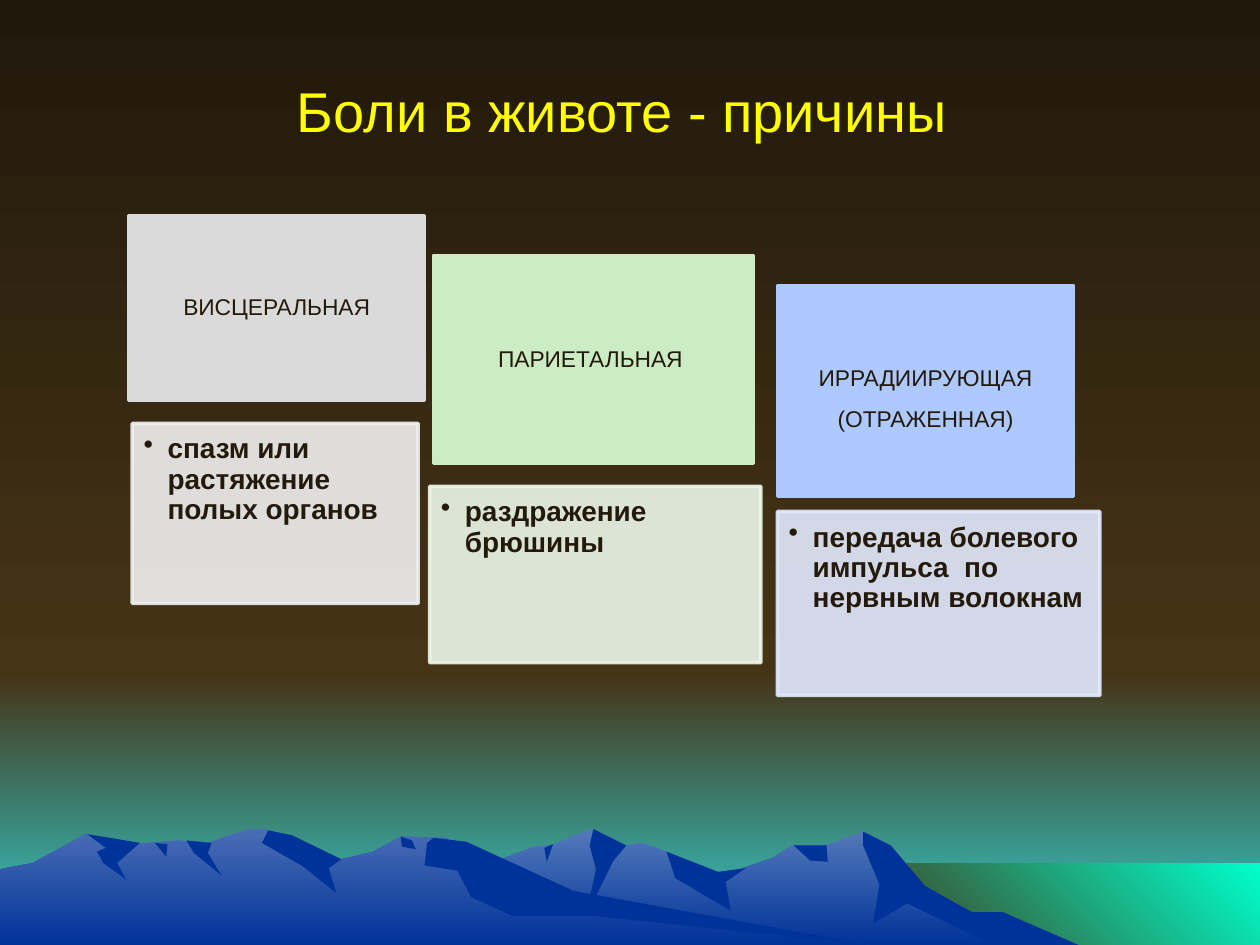
from dataclasses import dataclass
from typing import Optional

import pptx
import pptx.dml.color
import pptx.dml.fill
import pptx.enum.shapes
import pptx.enum.text
import pptx.oxml.ns
import pptx.util
from lxml import etree

EMU_PER_PX = 9144
WIDTH, HEIGHT = 1000, 750
HORIZON, SHORE = 533, 685


@dataclass(frozen=True)
class Theme:
    font: str = "Arial"
    title_size: int = 32
    label_size: int = 13
    detail_size: int = 16
    title: str = "FFFF00"
    text: str = "231A0B"
    earth: str = "463416"
    night: str = "20180B"
    dawn: str = "33CCCC"
    sea: str = "00FFCC"
    ridge: str = "003399"
    far_peak: str = "557ABA"
    near_peak: str = "4A6DB5"


Points = tuple[tuple[int, int], ...]


@dataclass(frozen=True)
class Panel:
    left: int
    top: int
    width: int
    height: int
    color: str
    text: str


@dataclass(frozen=True)
class Cause:
    label: Panel
    detail: Panel
    label_spacing: float = 0.9


THEME = Theme()

FAR_RANGE: Points = (
    (258, HEIGHT), (355, 698), (424, 672), (438, 671), (468, 658), (486, 673), (509, 669),
    (529, 676), (536, 690), (566, 697), (613, 681), (629, 671), (656, 671), (685, 660),
    (723, 698), (820, HEIGHT))
FAR_SHADOWS: tuple[Points, ...] = (
    ((685, 660), (707, 671), (734, 703), (771, 724), (796, 724), (856, HEIGHT), (788, HEIGHT),
     (720, 717), (693, 733), (698, 702), (685, 671)),
    ((471, 658), (497, 671), (487, 683), (465, 727), (473, 690), (468, 671)),
    ((529, 676), (570, 692), (592, 689), (576, 700), (580, 723), (536, 697)),
    ((630, 671), (656, 671), (657, 684), (643, 683)),
    ((432, 673), (439, 670), (434, 684)),
)
NEAR_RANGE: Points = (
    (0, HEIGHT), (0, 690), (26, 685), (68, 662), (94, 671), (143, 667), (160, 671), (196, 658),
    (212, 658), (236, 681), (271, 682), (296, 676), (318, 664), (354, 665), (432, 712),
    (690, HEIGHT))
NEAR_SHADOWS: tuple[Points, ...] = (
    ((213, 659), (232, 663), (271, 682), (261, 689), (267, 709), (241, 688), (208, 669)),
    ((339, 669), (344, 665), (370, 668), (455, 707), (690, HEIGHT), (472, 727), (407, 727),
     (374, 712), (363, 691), (337, 687)),
    ((318, 664), (327, 667), (330, 674), (319, 672)),
    ((148, 667), (168, 669), (165, 677), (176, 695), (154, 677)),
    ((123, 669), (133, 670), (132, 680)),
    ((69, 662), (111, 669), (93, 685), (100, 698), (82, 685), (77, 676), (84, 673)),
)

CAUSES = (
    Cause(Panel(102, 171, 235, 147, "DADADA", "ВИСЦЕРАЛЬНАЯ"),
          Panel(105, 336, 227, 143, "F1F1F1", "спазм или растяжение полых органов")),
    Cause(Panel(344, 203, 254, 165, "CCECC5", "ПАРИЕТАЛЬНАЯ "),
          Panel(341, 386, 263, 140, "EDF8EA", "раздражение брюшины")),
    Cause(Panel(617, 227, 235, 167, "ADC9FF", "ИРРАДИИРУЮЩАЯ (ОТРАЖЕННАЯ)"),
          Panel(617, 406, 256, 146, "E3EBFF", "передача болевого импульса  по  нервным волокнам"),
          1.5),
)


def px(length: int) -> pptx.util.Emu:
    return pptx.util.Emu(length * EMU_PER_PX)


def rgb(color: str) -> pptx.dml.color.RGBColor:
    return pptx.dml.color.RGBColor.from_string(color)


def paint(fill: pptx.dml.fill.FillFormat, color: str) -> None:
    fill.solid()
    fill.fore_color.rgb = rgb(color)


def draw_outline(page, points: Points, color: str, end_color: Optional[str] = None,
                 angle: int = 270) -> None:
    start, *rest = points
    builder = page.shapes.build_freeform(*start, scale=EMU_PER_PX)
    builder.add_line_segments(rest, close=True)
    shape = builder.convert_to_shape()
    shape.shadow.inherit = False
    shape.line.fill.background()
    if end_color is None:
        paint(shape.fill, color)
        return
    shape.fill.gradient()
    shape.fill.gradient_angle = angle
    for stop, stop_color in zip(shape.fill.gradient_stops, (color, end_color)):
        stop.color.rgb = rgb(stop_color)


def band(left: int, top: int, bottom: int) -> Points:
    return ((left, top), (WIDTH, top), (WIDTH, bottom), (left, bottom))


def draw_range(page, points: Points, color: str, shadows: tuple[Points, ...]) -> None:
    draw_outline(page, points, color, THEME.ridge)
    for shadow in shadows:
        draw_outline(page, shadow, THEME.ridge)


def draw_scenery(page) -> None:
    draw_outline(page, band(0, HORIZON, HEIGHT), THEME.earth, THEME.dawn)
    draw_outline(page, band(0, 0, HORIZON), THEME.night, THEME.earth)
    draw_outline(page, band(683, SHORE, HEIGHT), THEME.earth, THEME.sea, 45)
    draw_range(page, FAR_RANGE, THEME.far_peak, FAR_SHADOWS)
    draw_range(page, NEAR_RANGE, THEME.near_peak, NEAR_SHADOWS)


def write(shape, text: str, size: int, color: str, insets: tuple[int, int, int, int],
          centered: bool = True, spacing: float = 1.0):
    frame = shape.text_frame
    frame.word_wrap = True
    frame.margin_left, frame.margin_top, frame.margin_right, frame.margin_bottom = map(px, insets)
    anchors, aligns = pptx.enum.text.MSO_ANCHOR, pptx.enum.text.PP_ALIGN
    frame.vertical_anchor = anchors.MIDDLE if centered else anchors.TOP
    frame.text = text
    para = frame.paragraphs[0]
    para.alignment = aligns.CENTER if centered else aligns.LEFT
    para.line_spacing = spacing
    span = para.runs[0]
    span.font.name = THEME.font
    span.font.size = pptx.util.Pt(size)
    span.font.color.rgb = rgb(color)
    span.font.bold = not centered
    return para


def draw_panel(page, panel: Panel):
    box = page.shapes.add_shape(pptx.enum.shapes.MSO_SHAPE.RECTANGLE, px(panel.left),
                                px(panel.top), px(panel.width), px(panel.height))
    box.shadow.inherit = False
    paint(box.fill, panel.color)
    paint(box.line.fill, panel.color)
    box.line.width = pptx.util.Pt(2)
    return box


def draw_cause(page, cause: Cause) -> None:
    label = draw_panel(page, cause.label)
    write(label, cause.label.text, THEME.label_size, THEME.text, (10, 6, 10, 6),
          spacing=cause.label_spacing)
    detail = draw_panel(page, cause.detail)
    qn = pptx.oxml.ns.qn
    for color in detail._element.spPr.iter(qn("a:srgbClr")):
        etree.SubElement(color, qn("a:alpha"), val="90000")
    para = write(detail, cause.detail.text, THEME.detail_size, THEME.text, (9, 9, 12, 14),
                 centered=False, spacing=0.9)
    properties = para._p.get_or_add_pPr()
    properties.set("marL", str(px(19)))
    properties.set("indent", str(px(-19)))
    etree.SubElement(properties, qn("a:buChar"), char="•")


def main() -> None:
    deck = pptx.Presentation()
    deck.slide_width, deck.slide_height = px(WIDTH), px(HEIGHT)
    page = deck.slides.add_slide(deck.slide_layouts[6])
    paint(page.background.fill, THEME.earth)
    draw_scenery(page)
    title = page.shapes.add_textbox(px(50), px(25), px(900), px(125))
    write(title, "Боли в животе - причины ", THEME.title_size, THEME.title, (10, 5, 10, 5))
    for cause in CAUSES:
        draw_cause(page, cause)
    deck.save("out.pptx")


if __name__ == "__main__":
    main()
